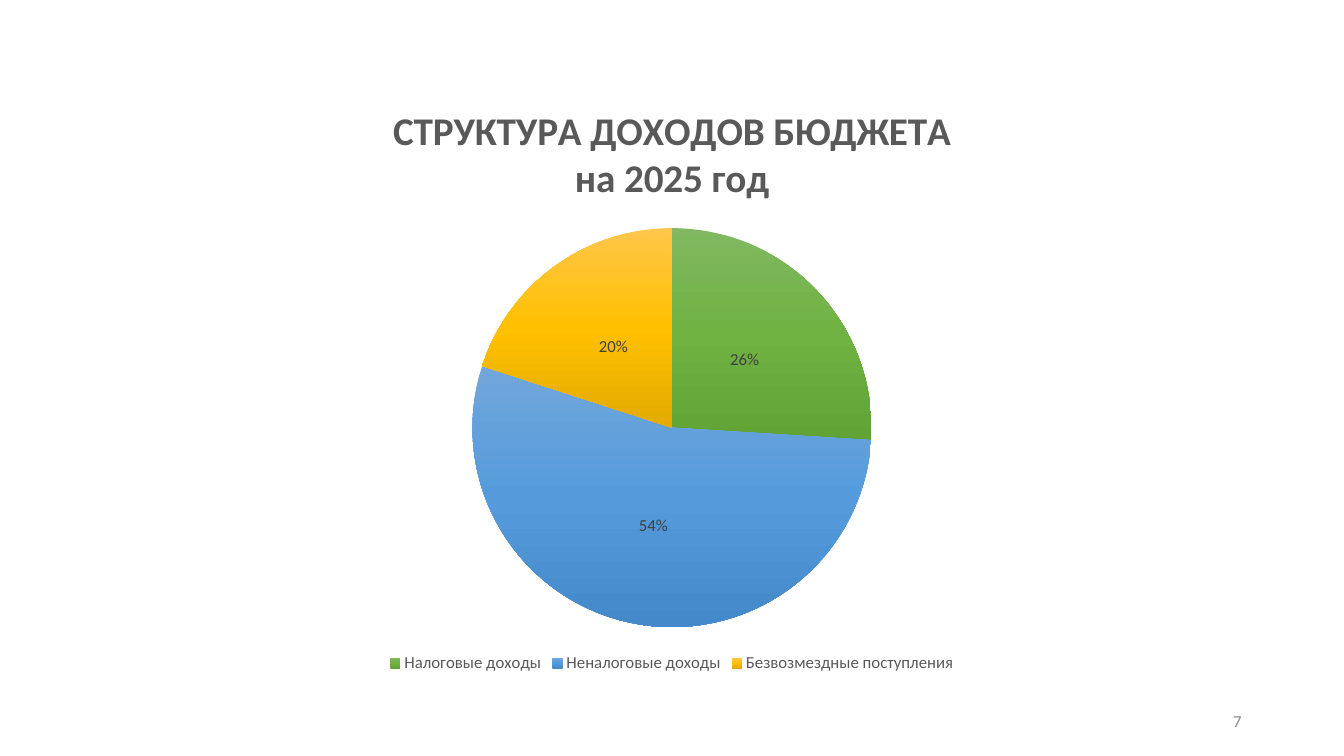
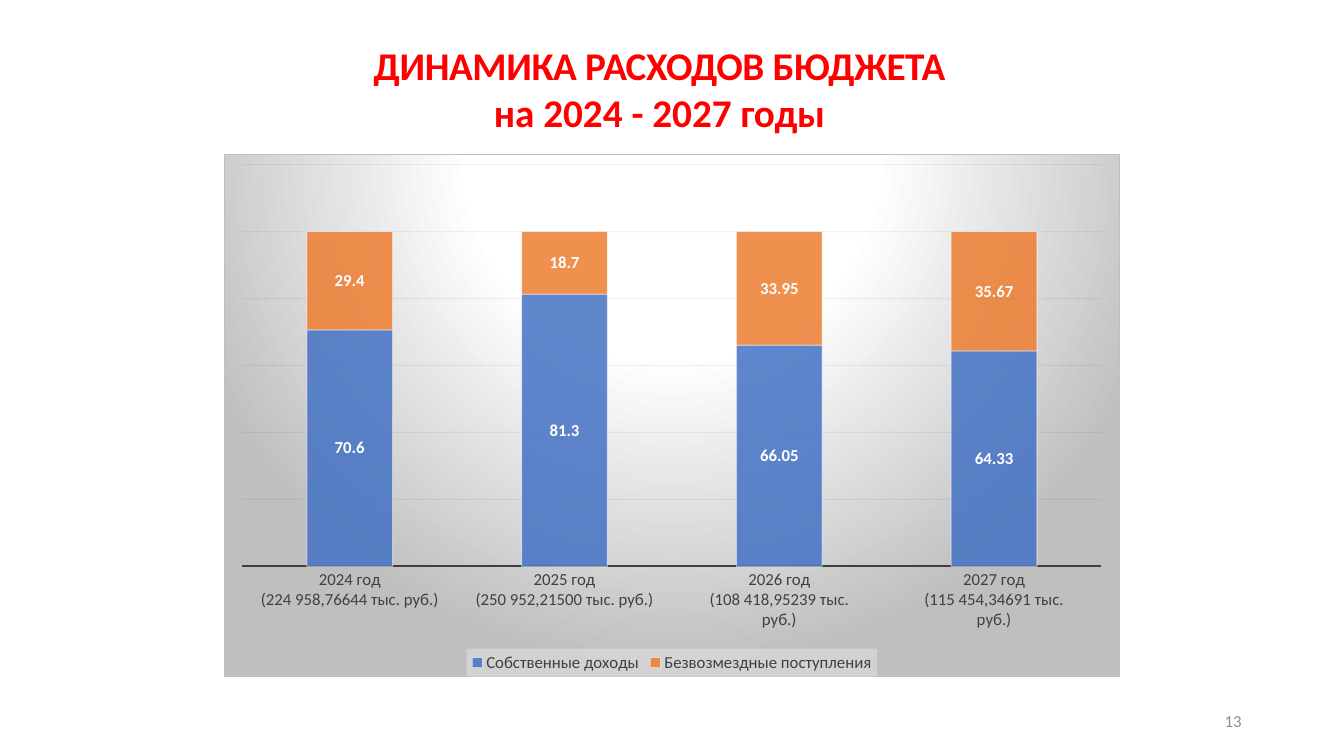
from dataclasses import dataclass

from pptx import Presentation
from pptx.chart.data import CategoryChartData
from pptx.dml.color import RGBColor
from pptx.enum.chart import XL_CHART_TYPE, XL_LABEL_POSITION, XL_LEGEND_POSITION, XL_TICK_MARK
from pptx.enum.text import MSO_ANCHOR, MSO_AUTO_SIZE, PP_ALIGN
from pptx.oxml import parse_xml
from pptx.oxml.ns import nsdecls, qn
from pptx.util import Pt

PIE, STACKED = XL_CHART_TYPE.PIE, XL_CHART_TYPE.COLUMN_STACKED
LABEL_CENTER = XL_LABEL_POSITION.CENTER
LEGEND_BOTTOM = XL_LEGEND_POSITION.BOTTOM
NO_TICK = XL_TICK_MARK.NONE
CENTER, RIGHT = PP_ALIGN.CENTER, PP_ALIGN.RIGHT
TOP, MIDDLE = MSO_ANCHOR.TOP, MSO_ANCHOR.MIDDLE
NO_AUTOFIT = MSO_AUTO_SIZE.NONE

FONT = "Calibri"
TITLE_SIZE, TEXT_SIZE = 28, 12
WHITE = RGBColor(0xFF, 0xFF, 0xFF)
BLACK = RGBColor(0x00, 0x00, 0x00)
RED = RGBColor(0xFF, 0x00, 0x00)
GRAY = RGBColor(0x59, 0x59, 0x59)
DARK_GRAY = RGBColor(0x40, 0x40, 0x40)
NUMBER_GRAY = RGBColor(0x8C, 0x8C, 0x8C)
EDGE_GRAY = RGBColor(0xBF, 0xBF, 0xBF)
LEGEND_GRAY = RGBColor(0xF2, 0xF2, 0xF2)
GRID = RGBColor(0x0D, 0x0D, 0x0D)
BLUE = RGBColor(0x44, 0x72, 0xC4)
ORANGE = RGBColor(0xED, 0x7D, 0x31)

CHART_LEFT, CHART_WIDTH, CHART_BOTTOM = 160, 640, 483.7
PIE_TOP, COLUMNS_TOP = 57, 110
LINEAR_DOWN = '<a:lin ang="5400000" scaled="0"/>'
CIRCLE = ('<a:path path="circle"><a:fillToRect l="50000" t="-80000" r="50000" b="180000"/>'
          '</a:path>')


@dataclass(frozen=True)
class Slice:
    name: str
    value: float
    light: RGBColor
    main: RGBColor
    dark: RGBColor


@dataclass(frozen=True)
class Income:
    name: str
    values: tuple[float, ...]
    color: RGBColor


SLICES = (
    Slice("Налоговые доходы", 26, RGBColor(0x81, 0xB8, 0x61),
          RGBColor(0x6F, 0xB2, 0x42), RGBColor(0x62, 0xA3, 0x36)),
    Slice("Неналоговые доходы", 54, RGBColor(0x71, 0xA6, 0xDB),
          RGBColor(0x55, 0x9B, 0xDB), RGBColor(0x44, 0x8A, 0xCA)),
    Slice("Безвозмездные поступления", 20, RGBColor(0xFF, 0xC6, 0x4B),
          RGBColor(0xFF, 0xC0, 0x00), RGBColor(0xE3, 0xAB, 0x00)),
)
YEARS = (
    "2024 год\n(224 958,76644 тыс. руб.)",
    "2025 год\n(250 952,21500 тыс. руб.)",
    "2026 год\n(108 418,95239 тыс.\nруб.)",
    "2027 год\n(115 454,34691 тыс.\nруб.)",
)
INCOMES = (
    Income("Собственные доходы", (70.6, 81.3, 66.05, 64.33), BLUE),
    Income("Безвозмездные поступления", (29.4, 18.7, 33.95, 35.67), ORANGE),
)


def style_font(font, *, size: float = TEXT_SIZE, color: RGBColor = DARK_GRAY,
               bold: bool = False) -> None:
    font.name = FONT
    font.size = Pt(size)
    font.bold = bold
    font.color.rgb = color


def add_span(para, text: str, *, spacing: float = 0, **style) -> None:
    """Add a run; spacing is the extra space between letters in points."""
    span = para.add_run()
    span.text = text
    style_font(span.font, **style)
    if spacing:
        span._r.get_or_add_rPr().set("spc", str(round(spacing * 100)))


def add_page_number(page, number: int) -> None:
    box = page.shapes.add_textbox(Pt(678), Pt(500.4), Pt(216), Pt(28.8))
    frame = box.text_frame
    frame.word_wrap = True
    frame.vertical_anchor = MIDDLE
    para = frame.paragraphs[0]
    para.alignment = RIGHT
    add_span(para, str(number), color=NUMBER_GRAY)


def gradient(stops: list[tuple[int, RGBColor]], direction: str) -> str:
    marks = "".join(f'<a:gs pos="{percent * 1000}"><a:srgbClr val="{color}"/></a:gs>'
                    for percent, color in stops)
    return f'<a:gradFill {nsdecls("a")}><a:gsLst>{marks}</a:gsLst>{direction}</a:gradFill>'


def set_opacity(chart, fill_query: str, percent: int) -> None:
    """Make the solid fills below the queried elements partly transparent."""
    for color in chart.element.xpath(f"{fill_query}/a:solidFill/a:srgbClr"):
        color.append(parse_xml(f'<a:alpha {nsdecls("a")} val="{percent * 1000}"/>'))


def set_layout(part, index: int, *, chart_top: float, **places: float) -> None:
    """Place a chart part by x, y, w and h in points from the chart's corner."""
    for old in part.findall(qn("c:layout")):
        part.remove(old)
    chart_height = CHART_BOTTOM - chart_top
    target = '<c:layoutTarget val="inner"/>' if "w" in places else ""
    modes = '<c:xMode val="edge"/><c:yMode val="edge"/>'
    sizes = "".join(
        f'<c:{key} val="{value / (CHART_WIDTH if key in "xw" else chart_height):.5f}"/>'
        for key, value in places.items())
    part.insert(index, parse_xml(
        f'<c:layout {nsdecls("c")}><c:manualLayout>{target}{modes}{sizes}'
        '</c:manualLayout></c:layout>'))


def add_chart(page, kind, data: CategoryChartData, *, top: float, legend_color: RGBColor):
    frame = page.shapes.add_chart(kind, Pt(CHART_LEFT), Pt(top), Pt(CHART_WIDTH),
                                  Pt(CHART_BOTTOM - top), data)
    chart = frame.chart
    style_font(chart.font, size=10, color=BLACK)
    chart.has_legend = True
    chart.legend.position = LEGEND_BOTTOM
    chart.legend.include_in_layout = False
    style_font(chart.legend.font, color=legend_color)
    return chart


def style_labels(series, *, percent: bool = False, **style) -> None:
    labels = series.data_labels
    labels.show_value = not percent
    labels.show_percentage = percent
    labels.number_format = "0%" if percent else "General"
    labels.number_format_is_linked = False
    labels.position = LABEL_CENTER
    style_font(labels.font, **style)


def build_income_page(deck) -> None:
    page = deck.slides.add_slide(deck.slide_layouts[6])
    data = CategoryChartData()
    data.categories = [part.name for part in SLICES]
    data.add_series("Series 1", [part.value for part in SLICES])
    chart = add_chart(page, PIE, data, top=PIE_TOP, legend_color=GRAY)

    chart.has_title = True
    frame = chart.chart_title.text_frame
    for index, line in enumerate(("СТРУКТУРА ДОХОДОВ БЮДЖЕТА", "на 2025 год")):
        para = frame.add_paragraph() if index else frame.paragraphs[0]
        para.alignment = CENTER
        add_span(para, line, size=TITLE_SIZE, color=GRAY, bold=True)
    set_layout(chart.element.xpath("c:chart/c:title")[0], 1, chart_top=PIE_TOP, x=118.7, y=17)
    set_layout(chart.element.xpath("c:chart/c:plotArea")[0], 0, chart_top=PIE_TOP,
               x=177.5, y=106, w=285, h=285)

    plot = chart.plots[0]
    plot.vary_by_categories = True
    series = plot.series[0]
    style_labels(series, percent=True)
    for index in range(len(SLICES)):
        series.points[index].format.fill.solid()
    fills = chart.element.xpath(".//c:dPt/c:spPr/a:solidFill")
    for fill, part in zip(fills, SLICES):
        stops = [(0, part.light), (50, part.main), (100, part.dark)]
        fill.getparent().replace(fill, parse_xml(gradient(stops, LINEAR_DOWN)))
    add_page_number(page, 7)


def add_title(page) -> None:
    title = page.shapes.title
    title.left, title.top, title.width, title.height = Pt(231), Pt(26.6), Pt(480), Pt(75)
    frame = title.text_frame
    frame.auto_size = NO_AUTOFIT
    frame.word_wrap = True
    frame.vertical_anchor = TOP
    frame.margin_left = frame.margin_right = frame.margin_bottom = 0
    frame.margin_top = Pt(3.8)
    style = {"size": TITLE_SIZE, "color": RED, "bold": True}
    first = frame.paragraphs[0]
    first.line_spacing = Pt(32.6)
    add_span(first, "ДИНАМИКА РАСХОДОВ БЮДЖЕТА", spacing=-0.25, **style)
    second = frame.add_paragraph()
    add_span(second, "на 2024 - 2027 ", **style)
    add_span(second, "годы", spacing=-0.2, **style)
    for para in frame.paragraphs:
        para.alignment = CENTER


def style_axes(chart) -> None:
    years = chart.category_axis
    years.major_tick_mark = NO_TICK
    years.format.line.color.rgb = DARK_GRAY
    years.format.line.width = Pt(1.5)
    style_font(years.tick_labels.font)
    shares = chart.value_axis
    shares.minimum_scale, shares.maximum_scale, shares.major_unit = 0, 120, 20
    shares.visible = False
    shares.has_major_gridlines = True
    shares.major_gridlines.format.line.color.rgb = GRID
    shares.major_gridlines.format.line.width = Pt(0.75)
    set_opacity(chart, ".//c:majorGridlines/c:spPr/a:ln", 6)


def style_backgrounds(chart) -> None:
    """Fill the chart area with a round gradient and the legend with a pale box."""
    area = gradient([(0, WHITE), (39, WHITE), (100, EDGE_GRAY)], CIRCLE)
    border = (f'<a:ln w="{Pt(0.75)}"><a:solidFill><a:srgbClr val="{EDGE_GRAY}"/>'
              '</a:solidFill></a:ln>')
    chart.element.find(qn("c:chart")).addnext(
        parse_xml(f'<c:spPr {nsdecls("c", "a")}>{area}{border}</c:spPr>'))
    legend_text = chart.element.xpath(".//c:legend/c:txPr")[0]
    legend_text.addprevious(parse_xml(
        f'<c:spPr {nsdecls("c", "a")}><a:solidFill><a:srgbClr val="{LEGEND_GRAY}"/>'
        '</a:solidFill></c:spPr>'))
    set_opacity(chart, ".//c:legend/c:spPr", 39)


def build_spending_page(deck) -> None:
    page = deck.slides.add_slide(deck.slide_layouts[5])
    add_title(page)
    data = CategoryChartData()
    data.categories = YEARS
    for income in INCOMES:
        data.add_series(income.name, income.values)
    chart = add_chart(page, STACKED, data, top=COLUMNS_TOP, legend_color=DARK_GRAY)
    chart.has_title = False
    set_layout(chart.element.xpath("c:chart/c:plotArea")[0], 0, chart_top=COLUMNS_TOP,
               x=12.8, y=7.3, w=614.4, h=287.5)
    style_axes(chart)
    style_backgrounds(chart)

    plot = chart.plots[0]
    plot.vary_by_categories = False
    plot.gap_width = 150
    plot.overlap = 100
    for series, income in zip(plot.series, INCOMES):
        series.format.fill.solid()
        series.format.fill.fore_color.rgb = income.color
        series.format.line.color.rgb = WHITE
        series.format.line.width = Pt(0.75)
        style_labels(series, color=WHITE, bold=True)
    set_opacity(chart, ".//c:ser/c:spPr", 85)
    set_opacity(chart, ".//c:ser/c:spPr/a:ln", 50)
    add_page_number(page, 13)


def main() -> None:
    deck = Presentation()
    deck.slide_width, deck.slide_height = Pt(960), Pt(540)
    build_income_page(deck)
    build_spending_page(deck)
    deck.save("out.pptx")


if __name__ == "__main__":
    main()
